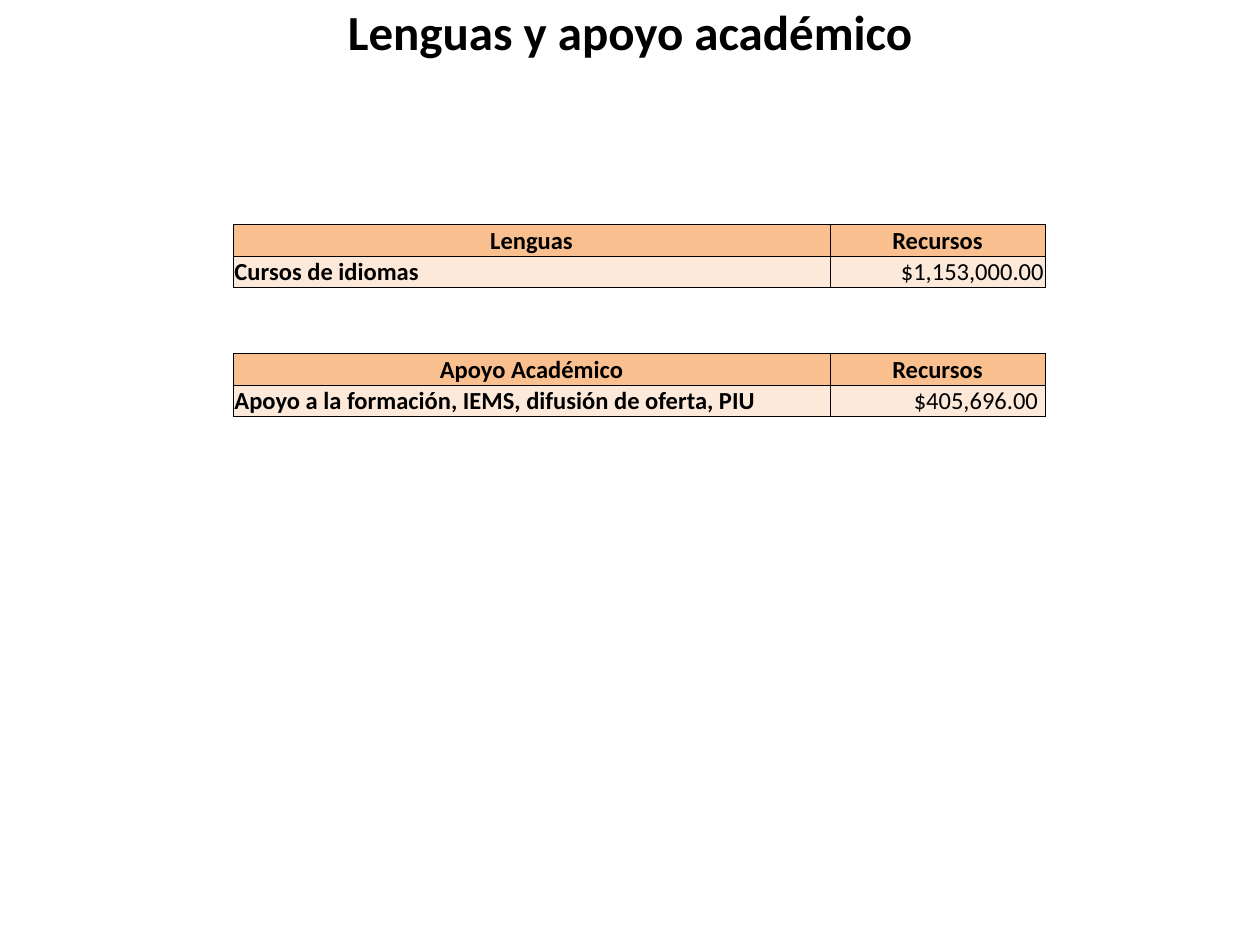
from dataclasses import dataclass

from lxml import etree
from pptx import Presentation
from pptx import util as u
from pptx.dml import color
from pptx.enum import text
from pptx.oxml import ns


@dataclass(frozen=True)
class Theme:
    font: str = "Calibri"
    ink: str = "000000"
    header_fill: str = "FABF8F"
    body_fill: str = "FDE9D9"
    title_size: float = 28
    table_size: float = 14
    border: float = 0.5


class SlideBuilder:
    def __init__(self, theme, page):
        self.theme = theme
        self.page = page

    def set_words(self, frame, wording, size, align, bold=True):
        frame.text = wording
        para = frame.paragraphs[0]
        para.alignment = align
        for span in para.runs:
            span.font.name = self.theme.font
            span.font.size = u.Pt(size)
            span.font.bold = bold
            span.font.color.rgb = color.RGBColor.from_string(self.theme.ink)

    def title(self, wording, left, top, width, height):
        box = self.page.shapes.add_textbox(u.Pt(left), u.Pt(top), u.Pt(width), u.Pt(height))
        frame = box.text_frame
        frame.word_wrap = True
        frame.vertical_anchor = text.MSO_ANCHOR.MIDDLE
        frame.margin_top, frame.margin_bottom = u.Pt(12.24), u.Pt(2.88)
        self.set_words(frame, wording, self.theme.title_size, text.PP_ALIGN.CENTER)

    def outline(self, cell):
        properties = cell._tc.get_or_add_tcPr()
        for side in ("lnL", "lnR", "lnT", "lnB"):
            line = etree.SubElement(properties, ns.qn(f"a:{side}"), w=str(u.Pt(self.theme.border)))
            fill = etree.SubElement(line, ns.qn("a:solidFill"))
            etree.SubElement(fill, ns.qn("a:srgbClr"), val=self.theme.ink)

    def cell(self, cell, wording, fill, align, bold, right_margin):
        cell.margin_left = cell.margin_top = u.Pt(0.75)
        cell.margin_right, cell.margin_bottom = u.Pt(right_margin), 0
        cell.vertical_anchor = text.MSO_ANCHOR.MIDDLE
        self.outline(cell)
        cell.fill.solid()
        cell.fill.fore_color.rgb = color.RGBColor.from_string(fill)
        self.set_words(cell.text_frame, wording, self.theme.table_size, align, bold)

    def budget_table(self, heading, concept, amount, amount_margin, left, top, widths, row_height):
        table = self.page.shapes.add_table(
            2, 2, u.Pt(left), u.Pt(top), u.Pt(sum(widths)), u.Pt(2 * row_height)
        ).table
        for column, width in zip(table.columns, widths):
            column.width = u.Pt(width)
        for row in table.rows:
            row.height = u.Pt(row_height)
        header, body = self.theme.header_fill, self.theme.body_fill
        align = text.PP_ALIGN
        self.cell(table.cell(0, 0), heading, header, align.CENTER, True, 0.75)
        self.cell(table.cell(0, 1), "Recursos", header, align.CENTER, True, 0.75)
        self.cell(table.cell(1, 0), concept, body, align.LEFT, True, 0.75)
        self.cell(table.cell(1, 1), amount, body, align.RIGHT, False, amount_margin)


def main():
    deck = Presentation()
    deck.slide_width, deck.slide_height = u.Pt(720), u.Pt(540)
    page = deck.slides.add_slide(deck.slide_layouts[6])
    builder = SlideBuilder(Theme(), page)

    builder.title("Lenguas y apoyo académico", 42.5, -11.5, 635, 49)
    budgets = (
        ("Lenguas", "Cursos de idiomas", "$1,153,000.00", 0.75),
        ("Apoyo Académico", "Apoyo a la formación, IEMS, difusión de oferta, PIU", "$405,696.00", 4),
    )
    for index, budget in enumerate(budgets):
        builder.budget_table(
            *budget, left=133.25, top=128.25 + 73.75 * index, widths=(341, 123), row_height=18
        )
    deck.save("out.pptx")


if __name__ == "__main__":
    main()
